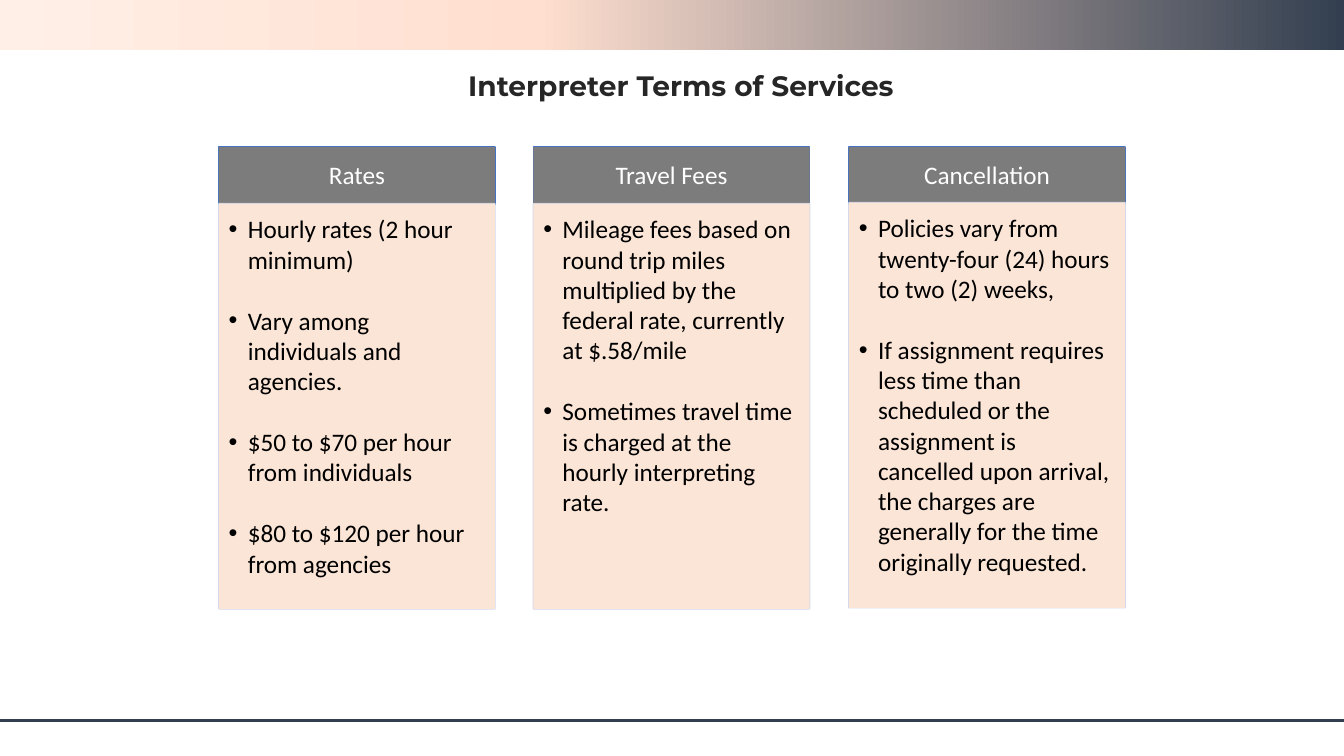
from copy import deepcopy

from lxml.etree import SubElement
from pptx import Presentation
from pptx.dml.color import RGBColor
from pptx.enum.shapes import MSO_CONNECTOR, MSO_SHAPE
from pptx.enum.text import MSO_ANCHOR, PP_ALIGN
from pptx.oxml.ns import qn
from pptx.util import Emu, Pt

EMU_PER_PX = 9144
NAVY, GREY, PEACH = "333F50", "7C7C7C", "FBE5D6"
BLUE, PALE_BLUE = "4472C4", "CFD5EA"
WHITE, BLACK, CHARCOAL = "FFFFFF", "000000", "262626"
COLUMN_LEFTS = (217, 529, 842)
BODY_TOPS = (202, 202, 201)
COLUMN_WIDTH, HEADER_TOP, HEADER_HEIGHT, BODY_HEIGHT = 274, 146, 57, 402

TERMS = {
    "Rates": [
        "Hourly rates (2 hour minimum)",
        "Vary among individuals and agencies.",
        "$50 to $70 per hour from individuals",
        "$80 to $120 per hour from agencies",
    ],
    "Travel Fees": [
        "Mileage fees based on round trip miles multiplied by the federal rate, "
        "currently at $.58/mile",
        "Sometimes travel time is charged at the hourly interpreting rate.",
    ],
    "Cancellation": [
        "Policies vary from twenty-four (24) hours to two (2) weeks,",
        "If assignment requires less time than scheduled or the assignment is "
        "cancelled upon arrival, the charges are generally for the time "
        "originally requested.",
    ],
}


def px(length):
    return Emu(length * EMU_PER_PX)


def color(value):
    return RGBColor.from_string(value)


class TermsSlide:
    """Hold the style and the current slide, and draw its elements."""

    def __init__(self, presentation):
        self.slide = presentation.slides.add_slide(presentation.slide_layouts[6])
        self.text_font = "Calibri"
        self.title_font = "Montserrat"

    def rectangle(self, box, fill, line=None, line_alpha=100):
        panel = self.slide.shapes.add_shape(MSO_SHAPE.RECTANGLE, *map(px, box))
        panel.shadow.inherit = False
        panel.fill.solid()
        panel.fill.fore_color.rgb = color(fill)
        if line is None:
            panel.line.fill.background()
            return panel
        panel.line.color.rgb = color(line)
        panel.line.width = Pt(1)
        if line_alpha < 100:
            tint = panel.line._get_or_add_ln().find(".//" + qn("a:srgbClr"))
            SubElement(tint, qn("a:alpha"), val=str(line_alpha * 1000))
        return panel

    def gradient_band(self, box, stops):
        band = self.rectangle(box, WHITE)
        band.fill.gradient()
        band.fill.gradient_angle = 180
        stop_list = band._element.spPr.find(".//" + qn("a:gsLst"))
        while len(stop_list) < len(stops):
            stop_list.append(deepcopy(stop_list[-1]))
        for stop, (position, shade) in zip(band.fill.gradient_stops, stops):
            stop.color.rgb = color(shade)
            stop.position = position

    def rule(self, start, end, shade, width):
        divider = self.slide.shapes.add_connector(
            MSO_CONNECTOR.STRAIGHT, *map(px, start + end))
        divider.line.color.rgb = color(shade)
        divider.line.width = Pt(width)
        SubElement(divider._element.spPr, qn("a:effectLst"))

    def frame(self, shape, insets, anchor=MSO_ANCHOR.TOP):
        frame = shape.text_frame
        frame.word_wrap = True
        frame.vertical_anchor = anchor
        (frame.margin_left, frame.margin_top,
         frame.margin_right, frame.margin_bottom) = map(px, insets)
        return frame

    def run(self, paragraph, text, shade, size=18, font=None, bold=False):
        run = paragraph.add_run()
        run.text = text
        run.font.name = font or self.text_font
        run.font.size = Pt(size)
        run.font.bold = bold
        run.font.color.rgb = color(shade)

    def title(self, box, text):
        heading = self.slide.shapes.add_textbox(*map(px, box))
        paragraph = self.frame(heading, (10, 5, 10, 5)).paragraphs[0]
        paragraph.alignment = PP_ALIGN.CENTER
        self.run(paragraph, text, CHARCOAL, 20, self.title_font, True)

    def header(self, box, text):
        self.rectangle(box, GREY, BLUE)
        face = self.rectangle(box, GREY)
        paragraph = self.frame(face, (14, 8, 14, 8), MSO_ANCHOR.MIDDLE).paragraphs[0]
        paragraph.alignment = PP_ALIGN.CENTER
        paragraph.line_spacing = 0.9
        self.run(paragraph, text, WHITE)

    def bullet_body(self, box, items):
        self.rectangle(box, PALE_BLUE, PALE_BLUE, 90)
        frame = self.frame(self.rectangle(box, PEACH), (10, 10, 14, 16))
        for index, item in enumerate(items):
            paragraph = frame.add_paragraph() if index else frame.paragraphs[0]
            paragraph.alignment = PP_ALIGN.LEFT
            paragraph.space_before = Pt(22 if index else 0)
            properties = paragraph._p.get_or_add_pPr()
            properties.set("marL", str(px(19)))
            properties.set("indent", str(px(-19)))
            SubElement(properties, qn("a:buFont"), typeface="Arial")
            SubElement(properties, qn("a:buChar"), char="•")
            self.run(paragraph, item, BLACK)


def main():
    presentation = Presentation()
    presentation.slide_width = px(1333)
    presentation.slide_height = px(750)
    slide = TermsSlide(presentation)
    slide.gradient_band((0, 0, 1333, 50),
                        [(0, NAVY), (0.6, "FFDFCF"), (1, "FFEFE7")])
    slide.rule((0, 715), (1333, 715), NAVY, 1.75)
    slide.title((255, 63, 841, 60), "Interpreter Terms of Services")
    for left, body_top, (topic, items) in zip(COLUMN_LEFTS, BODY_TOPS, TERMS.items()):
        slide.header((left, HEADER_TOP, COLUMN_WIDTH, HEADER_HEIGHT), topic)
        slide.bullet_body((left, body_top, COLUMN_WIDTH, BODY_HEIGHT), items)
    presentation.save("out.pptx")


if __name__ == "__main__":
    main()
